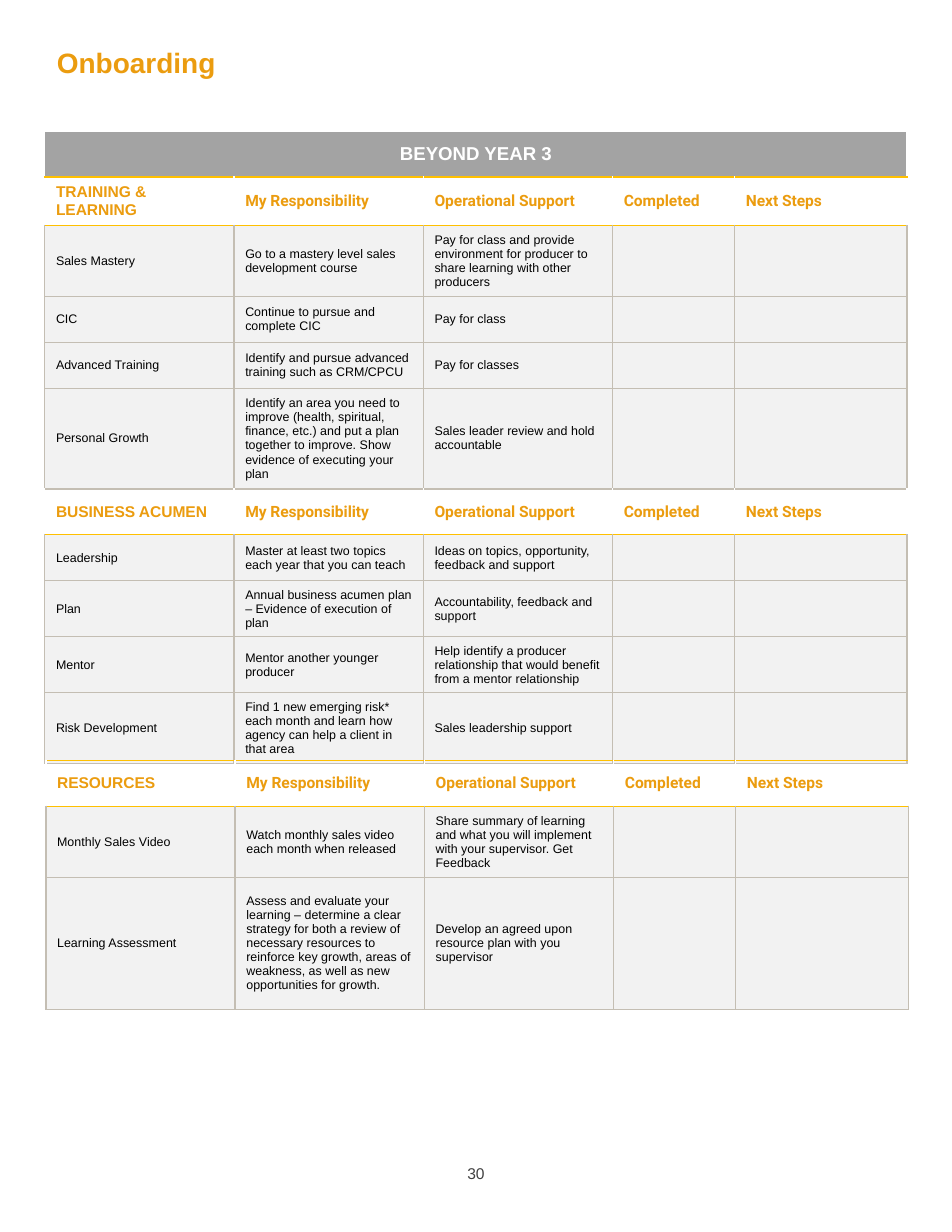
from dataclasses import dataclass

from lxml import etree
from pptx import Presentation
from pptx import util as u
from pptx.dml.color import RGBColor
from pptx.enum import text
from pptx.oxml import ns

ORANGE = RGBColor(0xEB, 0x9C, 0x0F)
GOLD = RGBColor(0xFF, 0xC0, 0x00)
TAUPE = RGBColor(0xC4, 0xBE, 0xB3)
BANNER_GRAY = RGBColor(0xA3, 0xA3, 0xA3)
ROW_GRAY = RGBColor(0xF2, 0xF2, 0xF2)
DARK_GRAY = RGBColor(0x40, 0x40, 0x40)
BLACK = RGBColor(0x00, 0x00, 0x00)
WHITE = RGBColor(0xFF, 0xFF, 0xFF)

COLUMN_WIDTHS = (1.69, 1.69, 1.69, 1.09, 1.54)
COLUMN_TITLES = ("My Responsibility", "Operational Support", "Completed", "Next Steps")
ROW_HEIGHT = 0.41


@dataclass
class TextStyle:
    size: float
    color: RGBColor
    bold: bool = False
    font: str = "Arial"
    align: text.PP_ALIGN | None = None


@dataclass
class Activity:
    name: str
    responsibility: str
    support: str
    height: float = ROW_HEIGHT


@dataclass
class Section:
    title: str
    activities: list[Activity]
    top_line: RGBColor = GOLD


TITLE = TextStyle(18, ORANGE, bold=True)
BANNER = TextStyle(12, WHITE, bold=True, align=text.PP_ALIGN.CENTER)
SECTION_TITLE = TextStyle(10, ORANGE, bold=True)
COLUMN_TITLE = TextStyle(10, ORANGE, bold=True, font="Roboto")
BODY = TextStyle(8, BLACK)
PAGE_NUMBER = TextStyle(10, DARK_GRAY, align=text.PP_ALIGN.CENTER)

TRAINING = Section("TRAINING & LEARNING", [
    Activity("Sales Mastery", "Go to a mastery level sales development course",
             "Pay for class and provide environment for producer to share learning "
             "with other producers", 0.6),
    Activity("CIC", "Continue to pursue and complete CIC", "Pay for class"),
    Activity("Advanced Training", "Identify and pursue advanced training such as CRM/CPCU",
             "Pay for classes"),
    Activity("Personal Growth",
             "Identify an area you need to improve (health, spiritual, finance, etc.) and put "
             "a plan together to improve. Show evidence of executing your plan",
             "Sales leader review and hold accountable", 0.85),
])
BUSINESS = Section("BUSINESS ACUMEN", [
    Activity("Leadership", "Master at least two topics each year that you can teach",
             "Ideas on topics, opportunity, feedback and support"),
    Activity("Plan", "Annual business acumen plan – Evidence of execution of plan",
             "Accountability, feedback and support", 0.47),
    Activity("Mentor", "Mentor another younger producer",
             "Help identify a producer relationship that would benefit from a mentor "
             "relationship", 0.47),
    Activity("Risk Development",
             "Find 1 new emerging risk* each month and learn how agency can help a client "
             "in that area", "Sales leadership support", 0.6),
], top_line=TAUPE)
RESOURCES = Section("RESOURCES", [
    Activity("Monthly Sales Video", "Watch monthly sales video each month when released",
             "Share summary of learning and what you will implement with your supervisor. "
             "Get Feedback", 0.63),
    Activity("Learning Assessment",
             "Assess and evaluate your learning – determine a clear strategy for both a review "
             "of necessary resources to reinforce key growth, areas of weakness, as well as "
             "new opportunities for growth.",
             "Develop an agreed upon resource plan with you supervisor", 1.18),
])


def write(frame, content: str, style: TextStyle) -> None:
    paragraph = frame.paragraphs[0]
    paragraph.text = content
    paragraph.alignment = style.align
    font = paragraph.font
    font.name, font.size, font.bold = style.font, u.Pt(style.size), style.bold
    font.color.rgb = style.color


def set_borders(cell, **colors: RGBColor) -> None:
    """Draw 1 pt borders on the sides given as L, R, T, B, in that order."""
    properties = cell._tc.get_or_add_tcPr()
    for index, (side, color) in enumerate(colors.items()):
        line = etree.Element(ns.qn(f"a:ln{side}"), w=str(u.Pt(1)))
        fill = etree.SubElement(line, ns.qn("a:solidFill"))
        etree.SubElement(fill, ns.qn("a:srgbClr"), val=str(color))
        properties.insert(index, line)


def fill_cell(cell, content: str, style: TextStyle, fill: RGBColor | None = None) -> None:
    write(cell.text_frame, content, style)
    cell.vertical_anchor = text.MSO_ANCHOR.MIDDLE
    if fill is None:
        cell.fill.background()
    else:
        cell.fill.solid()
        cell.fill.fore_color.rgb = fill


def add_section(table, first_row: int, section: Section) -> int:
    """Fill one section and return the row after it."""
    for column, title in enumerate((section.title, *COLUMN_TITLES)):
        cell = table.cell(first_row, column)
        fill_cell(cell, title, COLUMN_TITLE if column else SECTION_TITLE)
        set_borders(cell, T=section.top_line, B=GOLD)
    for offset, activity in enumerate(section.activities, start=1):
        row = first_row + offset
        table.rows[row].height = u.Inches(activity.height)
        contents = (activity.name, activity.responsibility, activity.support, "", "")
        for column, content in enumerate(contents):
            cell = table.cell(row, column)
            fill_cell(cell, content, BODY, ROW_GRAY)
            set_borders(cell, L=TAUPE, R=TAUPE, T=GOLD if offset == 1 else TAUPE, B=TAUPE)
    return first_row + len(section.activities) + 1


def add_plan_table(slide, left: float, top: float, sections: list[Section],
                   banner: str = "") -> None:
    row = 1 if banner else 0
    row_count = row + sum(len(section.activities) + 1 for section in sections)
    table = slide.shapes.add_table(
        row_count, len(COLUMN_WIDTHS), u.Inches(left), u.Inches(top),
        u.Inches(sum(COLUMN_WIDTHS)), u.Inches(ROW_HEIGHT * row_count)).table
    table.first_row = table.horz_banding = False
    for column, width in zip(table.columns, COLUMN_WIDTHS):
        column.width = u.Inches(width)
    for table_row in table.rows:
        table_row.height = u.Inches(ROW_HEIGHT)
    if banner:
        cell = table.cell(0, 0)
        cell.merge(table.cell(0, len(COLUMN_WIDTHS) - 1))
        fill_cell(cell, banner, BANNER, BANNER_GRAY)
        set_borders(cell, B=GOLD)
    for section in sections:
        row = add_section(table, row, section)


def add_label(slide, left: float, top: float, width: float, height: float,
              content: str, style: TextStyle):
    box = slide.shapes.add_textbox(*map(u.Inches, (left, top, width, height)))
    frame = box.text_frame
    frame.word_wrap = True
    write(frame, content, style)
    return frame


def main() -> None:
    presentation = Presentation()
    presentation.slide_width, presentation.slide_height = u.Inches(8.5), u.Inches(11)
    slide = presentation.slides.add_slide(presentation.slide_layouts[6])

    # Page title
    title = add_label(slide, 0.41, 0.36, 3.8, 0.4, "Onboarding", TITLE)
    title.vertical_anchor = text.MSO_ANCHOR.MIDDLE

    # Plan tables
    add_plan_table(slide, 0.4, 1.17, [TRAINING, BUSINESS], banner="BEYOND YEAR 3")
    add_plan_table(slide, 0.41, 6.79, [RESOURCES])

    # Page number
    number = add_label(slide, 4, 10.34, 0.5, 0.27, "30", PAGE_NUMBER)
    number.paragraphs[0].space_after = u.Pt(12)

    presentation.save("out.pptx")


if __name__ == "__main__":
    main()
